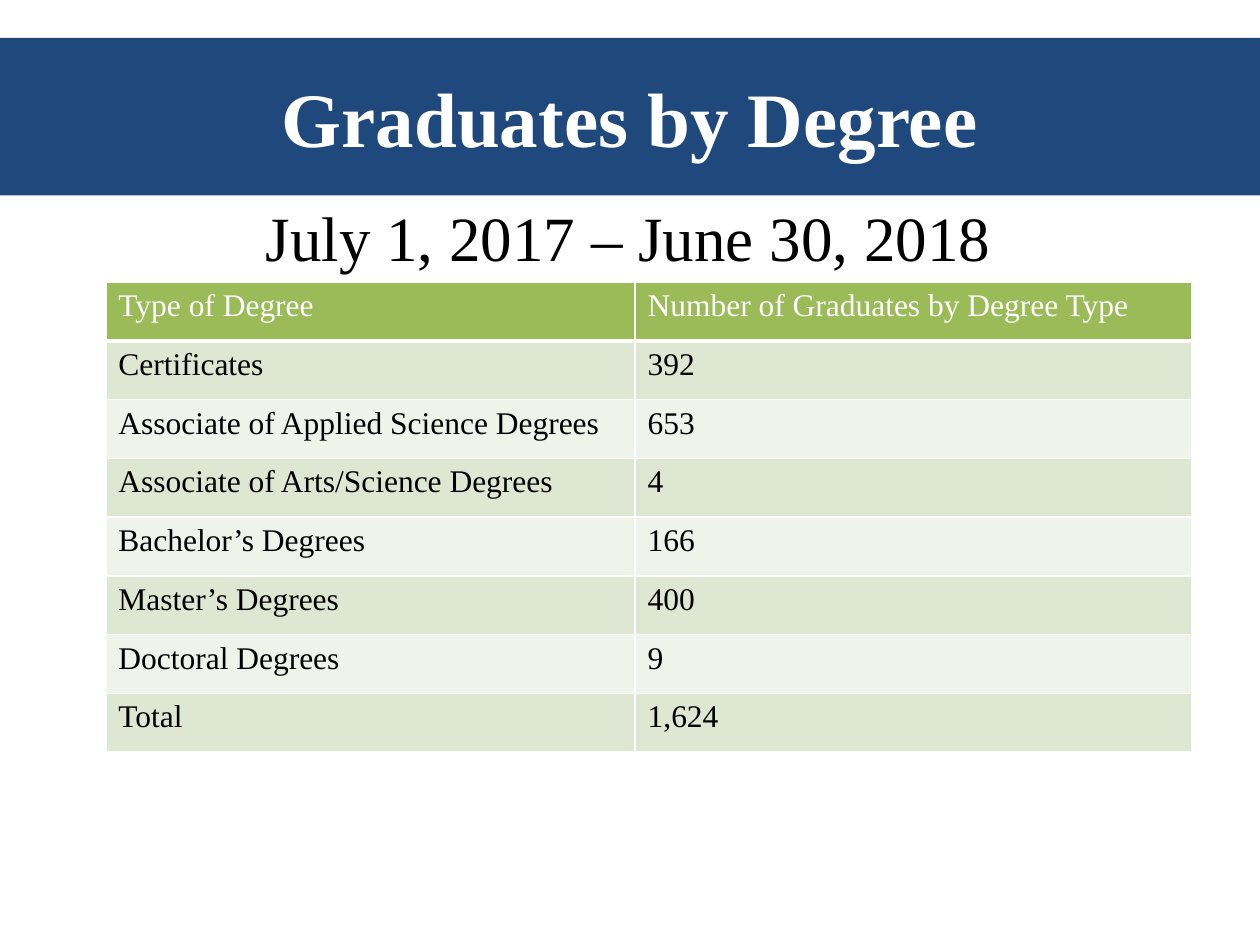
from dataclasses import dataclass
from typing import NamedTuple

from lxml import etree
from pptx import Presentation
from pptx.dml.color import RGBColor
from pptx.enum import shapes, text
from pptx.oxml.ns import qn
from pptx.util import Inches, Pt


@dataclass(frozen=True)
class Theme:
    font: str = "Times New Roman"
    title_size: int = 44
    period_size: int = 36
    table_size: int = 18
    navy: str = "1F497D"
    green: str = "9BBB59"
    bands: tuple[str, str] = ("DEE7D1", "EFF3EA")
    white: str = "FFFFFF"
    black: str = "000000"


class DegreeRow(NamedTuple):
    degree: str
    graduates: str


THEME = Theme()
HEADER = DegreeRow("Type of Degree", "Number of Graduates by Degree Type")
DEGREES = [
    DegreeRow("Certificates", "392"),
    DegreeRow("Associate of Applied Science Degrees", "653"),
    DegreeRow("Associate of Arts/Science Degrees", "4"),
    DegreeRow("Bachelor’s Degrees", "166"),
    DegreeRow("Master’s Degrees", "400"),
    DegreeRow("Doctoral Degrees", "9"),
    DegreeRow("Total", "1,624"),
]
COLUMN_WIDTHS = (4.2, 4.42)
TABLE_HEIGHT = 3.73


def write(tf, content: str, size: int, color: str, bold: bool = False):
    """Fill the first paragraph of a text frame and return it."""
    p = tf.paragraphs[0]
    p.text = content
    p.font.name = THEME.font
    p.font.size = Pt(size)
    p.font.bold = bold
    p.font.color.rgb = RGBColor.from_string(color)
    return p


def add_title(slide, title: str) -> None:
    sp = slide.shapes.add_shape(shapes.MSO_SHAPE.RECTANGLE, Inches(0), Inches(0.3),
                                Inches(10), Inches(1.25))
    sp.shadow.inherit = False
    sp.fill.solid()
    sp.fill.fore_color.rgb = RGBColor.from_string(THEME.navy)
    sp.line.fill.background()
    tf = sp.text_frame
    tf.vertical_anchor = text.MSO_ANCHOR.MIDDLE
    p = write(tf, title, THEME.title_size, THEME.white, bold=True)
    p.alignment = text.PP_ALIGN.CENTER


def add_period(slide, period: str) -> None:
    sp = slide.shapes.add_textbox(Inches(2.01), Inches(1.53), Inches(6.01), Inches(0.71))
    tf = sp.text_frame
    tf.word_wrap = False
    tf.auto_size = text.MSO_AUTO_SIZE.SHAPE_TO_FIT_TEXT
    write(tf, period, THEME.period_size, THEME.black)


def set_borders(cell, bottom: int) -> None:
    """Draw white borders: 1 pt on three sides, the given width below."""
    properties = cell._tc.get_or_add_tcPr()
    for side, width in (("L", 1), ("R", 1), ("T", 1), ("B", bottom)):
        line = etree.SubElement(properties, qn(f"a:ln{side}"), w=str(Pt(width)))
        fill = etree.SubElement(line, qn("a:solidFill"))
        etree.SubElement(fill, qn("a:srgbClr"), val=THEME.white)


def add_degree_table(slide, rows: list[DegreeRow]) -> None:
    table = slide.shapes.add_table(
        len(rows), len(COLUMN_WIDTHS), Inches(0.84), Inches(2.24),
        Inches(sum(COLUMN_WIDTHS)), Inches(TABLE_HEIGHT)).table
    for column, width in zip(table.columns, COLUMN_WIDTHS):
        column.width = Inches(width)
    for i, row in enumerate(rows):
        header = i == 0
        fill = THEME.green if header else THEME.bands[(i - 1) % 2]
        color = THEME.white if header else THEME.black
        for j, content in enumerate(row):
            cell = table.cell(i, j)
            set_borders(cell, bottom=3 if header else 1)
            cell.fill.solid()
            cell.fill.fore_color.rgb = RGBColor.from_string(fill)
            write(cell.text_frame, content, THEME.table_size, color)


def main() -> None:
    prs = Presentation()
    prs.slide_width, prs.slide_height = Inches(10), Inches(7.5)
    slide = prs.slides.add_slide(prs.slide_layouts[6])
    add_title(slide, "Graduates by Degree")
    add_degree_table(slide, [HEADER, *DEGREES])
    add_period(slide, "July 1, 2017 – June 30, 2018")
    prs.save("out.pptx")


if __name__ == "__main__":
    main()
